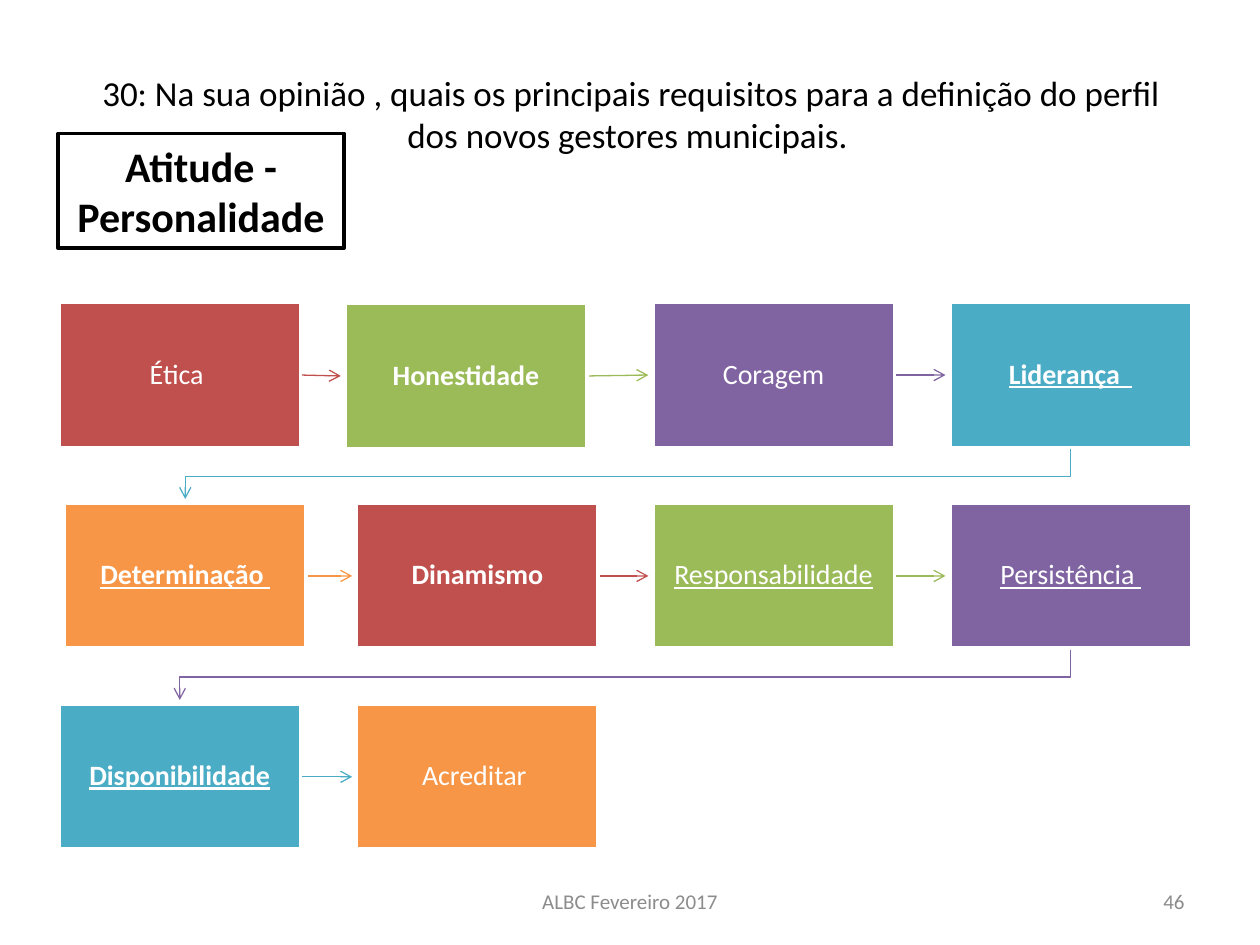
"""Builds a slide with a snaking flow of attitude requirements for municipal managers."""
from dataclasses import dataclass
from itertools import cycle

from lxml import etree
from pptx import Presentation
from pptx.dml.color import RGBColor
from pptx.enum.shapes import MSO_CONNECTOR, MSO_SHAPE
from pptx.enum.text import MSO_ANCHOR, PP_ALIGN
from pptx.oxml.ns import qn
from pptx.util import Cm, Pt

RECT = MSO_SHAPE.RECTANGLE
STRAIGHT = MSO_CONNECTOR.STRAIGHT
MIDDLE = MSO_ANCHOR.MIDDLE
CENTER, RIGHT = PP_ALIGN.CENTER, PP_ALIGN.RIGHT
RIGHT_SIDE = 3


@dataclass(frozen=True)
class Theme:
    font: str = "Calibri"
    ink: str = "000000"
    paper: str = "FFFFFF"
    muted: str = "8C8C8C"
    accents: tuple = ("C0504D", "9BBB59", "8064A2", "4BACC6", "F79646")
    title: int = 20
    label: int = 24
    step: int = 16
    footer: int = 12
    border: float = 2
    arrow: float = 0.75


class Canvas:
    def __init__(self, slide, theme):
        self.s = slide
        self.theme = theme

    def fill_text(self, sp, text, size, color, align=CENTER, bold=False, underline=False):
        tf = sp.text_frame
        tf.word_wrap = True
        tf.vertical_anchor = MIDDLE
        p = tf.paragraphs[0]
        p.text = text
        p.alignment = align
        f = p.font
        f.name, f.size, f.bold, f.underline = self.theme.font, Pt(size), bold, underline
        f.color.rgb = RGBColor.from_string(color)
        return p

    def text(self, text, x, y, w, h, size, color, align=CENTER):
        sp = self.s.shapes.add_textbox(Cm(x), Cm(y), Cm(w), Cm(h))
        self.fill_text(sp, text, size, color, align)

    def box(self, x, y, w, h, fill, line):
        sp = self.s.shapes.add_shape(RECT, Cm(x), Cm(y), Cm(w), Cm(h))
        sp.shadow.inherit = False
        sp.fill.solid()
        sp.fill.fore_color.rgb = RGBColor.from_string(fill)
        sp.line.color.rgb = RGBColor.from_string(line)
        sp.line.width = Pt(self.theme.border)
        return sp

    def label(self, text, x, y, w, h):
        t = self.theme
        sp = self.box(x, y, w, h, t.paper, t.ink)
        self.fill_text(sp, text, t.label, t.ink, bold=True)

    def step(self, text, x, y, w, h, fill, bold, underline):
        t = self.theme
        sp = self.box(x, y, w, h, fill, t.paper)
        p = self.fill_text(sp, text, t.step, t.paper, bold=bold, underline=underline)
        p.line_spacing = 0.9
        tf = sp.text_frame
        tf.margin_left = tf.margin_right = tf.margin_top = tf.margin_bottom = Cm(0.3)
        return sp

    def arrowhead(self, sp, color):
        sp.line.color.rgb = RGBColor.from_string(color)
        sp.line.width = Pt(self.theme.arrow)
        ln = sp._element.spPr.find(qn("a:ln"))
        etree.SubElement(ln, qn("a:tailEnd"), type="arrow")

    def arrow(self, start, end, color):
        cx = self.s.shapes.add_connector(STRAIGHT, *map(Cm, start + end))
        self.arrowhead(cx, color)
        etree.SubElement(cx._element.spPr, qn("a:effectLst"))
        return cx

    def elbow(self, points, color):
        first, *rest = [(Cm(x), Cm(y)) for x, y in points]
        fb = self.s.shapes.build_freeform(*first)
        fb.add_line_segments(rest, close=False)
        sp = fb.convert_to_shape()
        sp.shadow.inherit = False
        sp.fill.background()
        self.arrowhead(sp, color)


STEP_W, STEP_H = 4.87, 2.92
GAP, DROP = 0.09, 0.58
ROW_1, ROW_2, ROW_3 = 6.1, 10.15, 14.2
STEPS = [
    ("Ética ", 1.19, ROW_1, False, False),
    ("Honestidade", 6.96, ROW_1 + 0.02, True, False),
    ("Coragem", 13.16, ROW_1, False, False),
    ("Liderança  ", 19.15, ROW_1, True, True),
    ("Determinação ", 1.3, ROW_2, True, True),
    ("Dinamismo", 7.19, ROW_2, True, False),
    ("Responsabilidade", 13.16, ROW_2, False, True),
    ("Persistência ", 19.15, ROW_2, False, True),
    ("Disponibilidade", 1.19, ROW_3, True, True),
    ("Acreditar ", 7.19, ROW_3, False, False),
]


def draw_flow(c):
    following = STEPS[1:] + [None]
    for step, nxt, color in zip(STEPS, following, cycle(c.theme.accents)):
        text, x, y, bold, underline = step
        cx = None
        if nxt and nxt[1] > x:
            start = (x + STEP_W, y + STEP_H / 2)
            cx = c.arrow(start, (nxt[1] - GAP, nxt[2] + STEP_H / 2), color)
        elif nxt:
            x1, x2 = x + STEP_W / 2, nxt[1] + STEP_W / 2
            bottom = y + STEP_H
            turn = bottom + DROP
            c.elbow([(x1, bottom), (x1, turn), (x2, turn), (x2, nxt[2] - GAP)], color)
        sp = c.step(text, x, y, STEP_W, STEP_H, color, bold, underline)
        if cx is not None:
            cx.begin_connect(sp, RIGHT_SIDE)


def main():
    prs = Presentation()
    prs.slide_width, prs.slide_height = Cm(25.4), Cm(19.05)
    t = Theme()
    c = Canvas(prs.slides.add_slide(prs.slide_layouts[6]), t)
    c.text("30: Na sua opinião , quais os principais requisitos para a definição "
           "do perfil dos novos gestores municipais. ",
           1.3, 0.69, 22.86, 3.18, t.title, t.ink)
    draw_flow(c)
    c.label("Atitude - Personalidade", 1.17, 2.69, 5.77, 2.31)
    c.text("ALBC Fevereiro 2017", 8.68, 17.66, 8.04, 1.01, t.footer, t.muted)
    c.text("46", 18.2, 17.66, 5.93, 1.01, t.footer, t.muted, RIGHT)
    prs.save("out.pptx")


if __name__ == "__main__":
    main()
